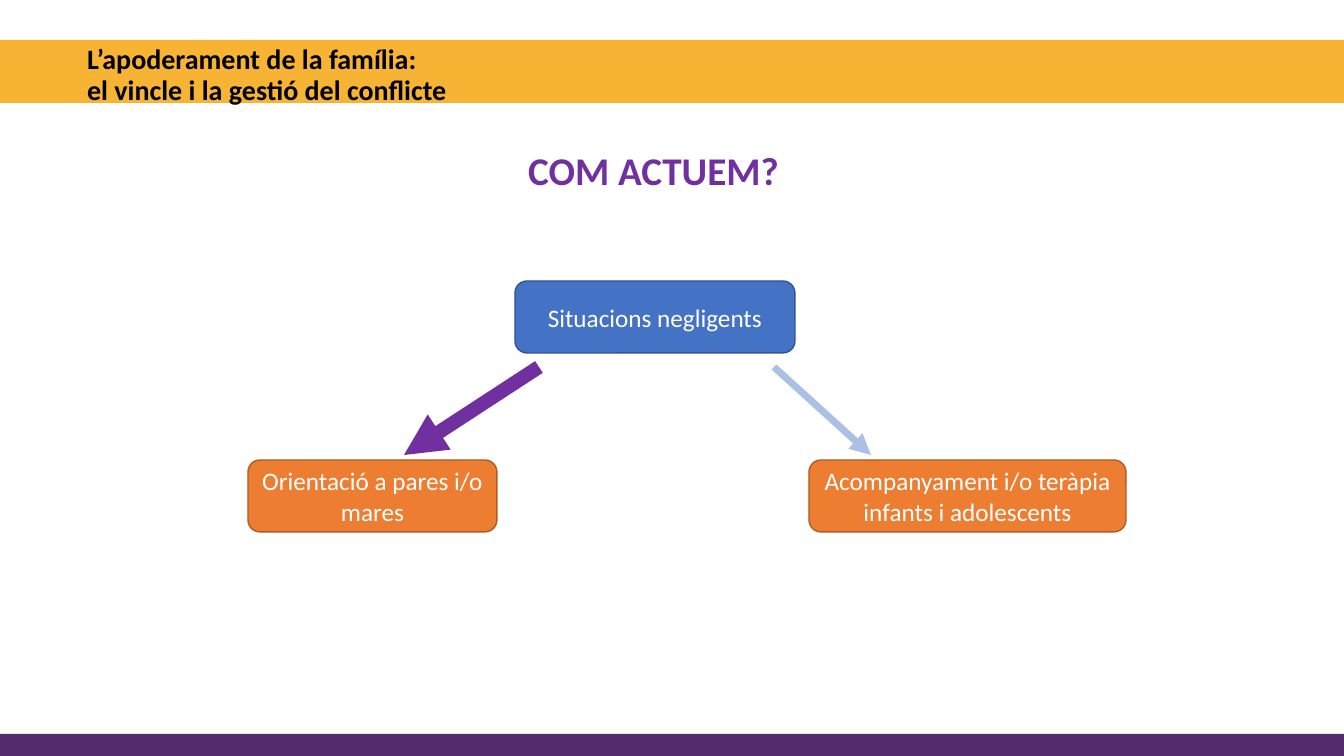
"""Build the slide on how to act in negligent situations."""
from pptx import Presentation
from pptx.dml.color import RGBColor
from pptx.enum.shapes import MSO_CONNECTOR as CONNECTOR, MSO_SHAPE as SHAPE
from pptx.enum.text import MSO_ANCHOR as ANCHOR, MSO_AUTO_SIZE as AUTO_SIZE, PP_ALIGN as ALIGN
from pptx.oxml.ns import qn
from pptx.util import Pt
from lxml.etree import SubElement

THEME = {
    "font": "Calibri",
    "black": "000000", "white": "FFFFFF", "purple": "7030A0",
    "band": "F7B334", "footer": "542C6E",
    "blue": "4472C4", "blue_line": "325491", "pale_blue": "ABC0E4",
    "orange": "ED7D31", "orange_line": "AF5C24",
    "title_size": 20, "heading_size": 28, "box_size": 18,
}


def px(*lengths):
    return [round(length * 914400 / 100.8) for length in lengths]


def write(shape, text, size, color, bold=False, align=ALIGN.CENTER, anchor=ANCHOR.MIDDLE, spacing=None):
    frame = shape.text_frame
    frame.word_wrap = True
    frame.auto_size = AUTO_SIZE.NONE
    frame.vertical_anchor = anchor
    paragraph = frame.paragraphs[0]
    paragraph.text = text
    paragraph.alignment = align
    paragraph.line_spacing = spacing
    for run in paragraph.runs:
        run.font.name = THEME["font"]
        run.font.size = Pt(THEME[size])
        run.font.bold = bold
        run.font.color.rgb = RGBColor.from_string(THEME[color])


presentation = Presentation()
presentation.slide_width, presentation.slide_height = px(1344, 756)
slide = presentation.slides.add_slide(presentation.slide_layouts[5])
shapes = slide.shapes

for top, height, color in [(40, 63, "band"), (734, 22, "footer")]:
    bar = shapes.add_shape(SHAPE.RECTANGLE, *px(0, top, 1344, height))
    bar.shadow.inherit = False
    bar.fill.solid()
    bar.fill.fore_color.rgb = RGBColor.from_string(THEME[color])
    bar.line.fill.background()

title = shapes.title
title.left, title.top, title.width, title.height = px(77, 40, 775, 72)
write(title, "L’apoderament de la família:\vel vincle i la gestió del conflicte",
      "title_size", "black", bold=True, align=ALIGN.LEFT, spacing=0.9)
shapes._spTree.append(title._element)

heading = shapes.add_textbox(*px(515, 141, 277, 57))
write(heading, "COM ACTUEM?", "heading_size", "purple", bold=True, anchor=ANCHOR.TOP)

boxes = [
    ("Situacions negligents", 515, 281, 280, "blue"),
    ("Orientació a pares i/o mares", 248, 460, 249, "orange"),
    ("Acompanyament i/o teràpia infants i adolescents", 809, 460, 317, "orange"),
]
for text, left, top, width, color in boxes:
    box = shapes.add_shape(SHAPE.ROUNDED_RECTANGLE, *px(left, top, width, 72))
    box.shadow.inherit = False
    box.fill.solid()
    box.fill.fore_color.rgb = RGBColor.from_string(THEME[color])
    box.line.color.rgb = RGBColor.from_string(THEME[color + "_line"])
    box.line.width = Pt(1)
    write(box, text, "box_size", "white")

for start, end, color, width in [(539, 404, "purple", 10), (774, 871, "pale_blue", 5)]:
    arrow = shapes.add_connector(CONNECTOR.STRAIGHT, *px(start, 367, end, 455))
    arrow.line.color.rgb = RGBColor.from_string(THEME[color])
    arrow.line.width = Pt(width)
    SubElement(arrow.line._get_or_add_ln(), qn("a:tailEnd"), type="triangle")
    SubElement(arrow._element.spPr, qn("a:effectLst"))

presentation.save("out.pptx")
